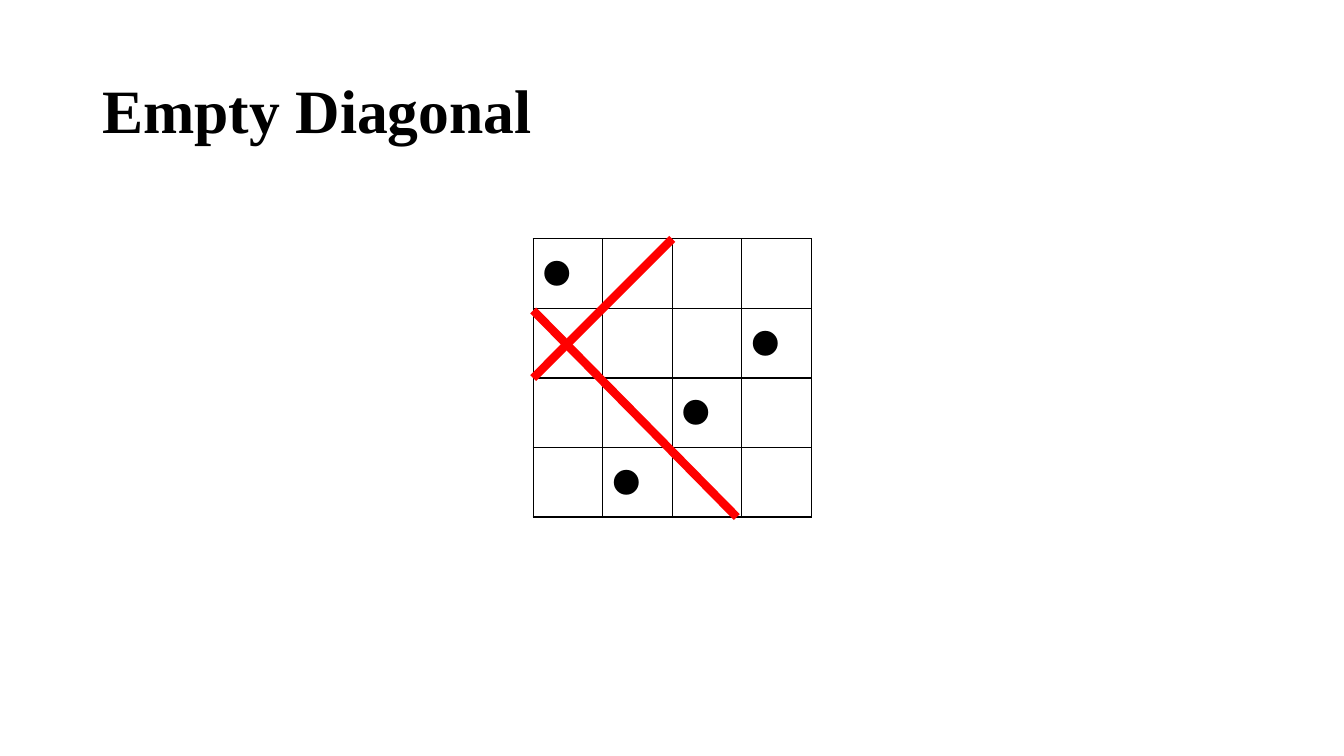
from dataclasses import dataclass

from lxml import etree
from pptx import Presentation
from pptx.dml import color
from pptx.enum import shapes, text
from pptx.oxml import ns
from pptx.util import Pt


@dataclass(frozen=True)
class Theme:
    ink: str = "000000"
    red: str = "FF0000"
    serif: str = "Times New Roman"
    sans: str = "Calibri"
    title: float = 44
    queen: float = 32
    grid: float = 1
    slash: float = 6


@dataclass(frozen=True)
class Queen:
    row: int
    col: int


@dataclass(frozen=True)
class Slash:
    x1: float
    y1: float
    x2: float
    y2: float


THEME = Theme()
SIZE = 4
CELL = 49.68
LEFT, TOP = 380.88, 170.64
QUEENS = [Queen(0, 0), Queen(1, 3), Queen(2, 2), Queen(3, 1)]
SLASHES = [
    Slash(LEFT, 221.76, 526.32, TOP + SIZE * CELL),
    Slash(LEFT, TOP + 2 * CELL, LEFT + 2 * CELL, TOP),
]


def write(frame, words: str, *, font: str, size: float, bold: bool = False,
          spacing: float = 1.0) -> None:
    para = frame.paragraphs[0]
    para.line_spacing = spacing
    run = para.add_run()
    run.text = words
    run.font.name = font
    run.font.size = Pt(size)
    run.font.bold = bold
    run.font.color.rgb = color.RGBColor.from_string(THEME.ink)


def add_title(slide, words: str) -> None:
    box = slide.shapes.add_textbox(Pt(66), Pt(28.75), Pt(828), Pt(104.4))
    frame = box.text_frame
    frame.word_wrap = True
    frame.vertical_anchor = text.MSO_ANCHOR.MIDDLE
    write(frame, words, font=THEME.serif, size=THEME.title, bold=True, spacing=0.9)


def add_edges(cell) -> None:
    props = cell._tc.get_or_add_tcPr()
    for side in ("lnL", "lnR", "lnT", "lnB"):
        edge = etree.SubElement(props, ns.qn(f"a:{side}"), w=str(Pt(THEME.grid)))
        fill = etree.SubElement(edge, ns.qn("a:solidFill"))
        etree.SubElement(fill, ns.qn("a:srgbClr"), val=THEME.ink)


def add_board(slide, queens: list[Queen]) -> None:
    side = Pt(SIZE * CELL)
    board = slide.shapes.add_table(SIZE, SIZE, Pt(LEFT), Pt(TOP), side, side).table
    board.first_row = False
    board.horz_banding = False
    for line in board.rows:
        line.height = Pt(CELL)
    for line in board.columns:
        line.width = Pt(CELL)
    for cell in board.iter_cells():
        add_edges(cell)
        cell.fill.background()
    for queen in queens:
        frame = board.cell(queen.row, queen.col).text_frame
        write(frame, "⚫", font=THEME.sans, size=THEME.queen)


def add_slash(slide, slash: Slash) -> None:
    line = slide.shapes.add_connector(
        shapes.MSO_CONNECTOR.STRAIGHT,
        Pt(slash.x1), Pt(slash.y1), Pt(slash.x2), Pt(slash.y2))
    line.line.color.rgb = color.RGBColor.from_string(THEME.red)
    line.line.width = Pt(THEME.slash)
    etree.SubElement(line._element.spPr, ns.qn("a:effectLst"))


def main() -> None:
    deck = Presentation()
    deck.slide_width, deck.slide_height = Pt(960), Pt(540)
    slide = deck.slides.add_slide(deck.slide_layouts[6])
    add_title(slide, "Empty Diagonal")
    add_board(slide, QUEENS)
    for slash in SLASHES:
        add_slash(slide, slash)
    deck.save("out.pptx")


if __name__ == "__main__":
    main()
